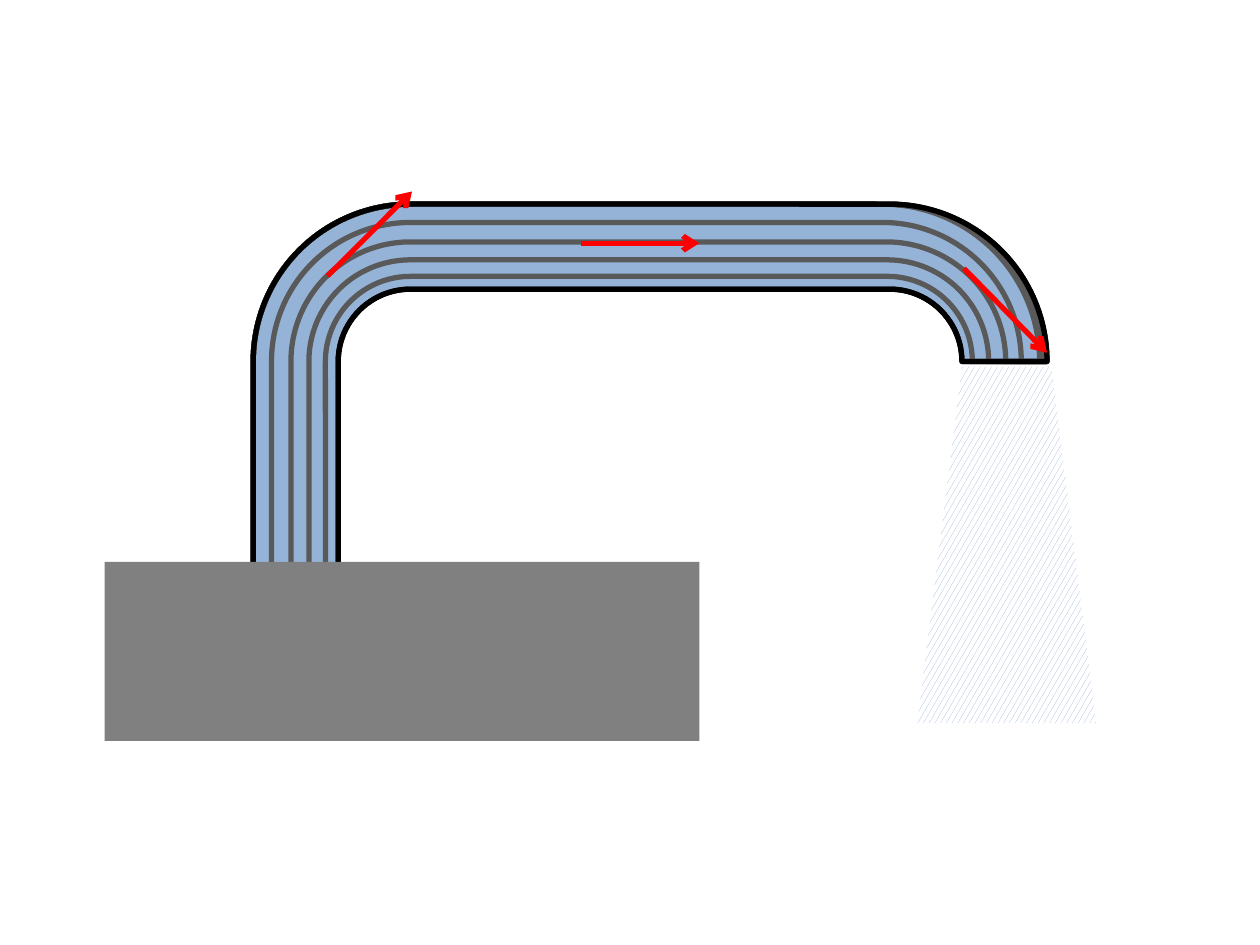
from lxml.etree import SubElement
from pptx import Presentation
from pptx.dml.color import RGBColor
from pptx.enum.dml import MSO_PATTERN
from pptx.enum.shapes import MSO_CONNECTOR, MSO_SHAPE
from pptx.oxml.ns import qn
from pptx.util import Inches, Pt

COLORS = {
    "water": "95B3D7",
    "stream": "595959",
    "wall": "000000",
    "base": "808080",
    "velocity": "FF0000",
    "paper": "FFFFFF",
}
STREAMLINES = [(0.197, 0.105), (0.152, 0.083), (0.103, 0.061), (0.05, 0.045)]
WALL = (0.321, 0.116)
BEND = 0.429


def color(name):
    """Return the named colour."""
    return RGBColor.from_string(COLORS[name])


def add_block(page, kind, box, fill=None, line=None):
    """Add a flat preset shape with an optional fill and outline."""
    shape = page.shapes.add_shape(kind, *map(Inches, box))
    shape.shadow.inherit = False
    if fill:
        shape.fill.solid()
        shape.fill.fore_color.rgb = color(fill)
    else:
        shape.fill.background()
    if line:
        shape.line.color.rgb = color(line)
        shape.line.width = Pt(3)
    else:
        shape.line.fill.background()
    return shape


def add_bent_pipe(page, box, profile, fill=None, line=None):
    """Add a U-turn band with the given thickness and end half-width."""
    pipe = add_block(page, MSO_SHAPE.U_TURN_ARROW, box, fill, line)
    for index, value in enumerate((*profile, 0, BEND, BEND)):
        pipe.adjustments[index] = value


def add_tap(page, box):
    """Draw the water-filled pipe, its streamlines and its wall."""
    add_bent_pipe(page, box, WALL, "water", "wall")
    for profile in STREAMLINES:
        add_bent_pipe(page, box, profile, line="stream")
    add_bent_pipe(page, box, WALL, line="wall")


def add_spray(page, box):
    """Draw the patterned cone of falling water."""
    spray = add_block(page, MSO_SHAPE.TRAPEZOID, box)
    spray.fill.patterned()
    spray.fill.pattern = MSO_PATTERN.LARGE_CONFETTI
    spray.fill.fore_color.rgb = color("water")
    spray.fill.back_color.rgb = color("paper")


def add_velocity(page, start, end):
    """Draw a red arrow from start to end."""
    arrow = page.shapes.add_connector(
        MSO_CONNECTOR.STRAIGHT, *map(Inches, (*start, *end))
    )
    arrow.line.color.rgb = color("velocity")
    arrow.line.width = Pt(3)
    SubElement(arrow.line._get_or_add_ln(), qn("a:tailEnd"), type="arrow")
    SubElement(arrow._element.spPr, qn("a:effectLst"))


def main():
    """Build and save the slide."""
    deck = Presentation()
    deck.slide_width, deck.slide_height = Inches(10), Inches(7.5)
    page = deck.slides.add_slide(deck.slide_layouts[6])
    add_tap(page, (2.01, 1.62, 6.3, 2.91))
    add_spray(page, (7.28, 2.91, 1.42, 2.83))
    add_block(page, MSO_SHAPE.RECTANGLE, (0.83, 4.46, 4.72, 1.42), "base")
    add_velocity(page, (4.61, 1.93), (5.55, 1.93))
    add_velocity(page, (2.6, 2.19), (3.27, 1.52))
    add_velocity(page, (7.65, 2.13), (8.31, 2.8))
    deck.save("out.pptx")


if __name__ == "__main__":
    main()
